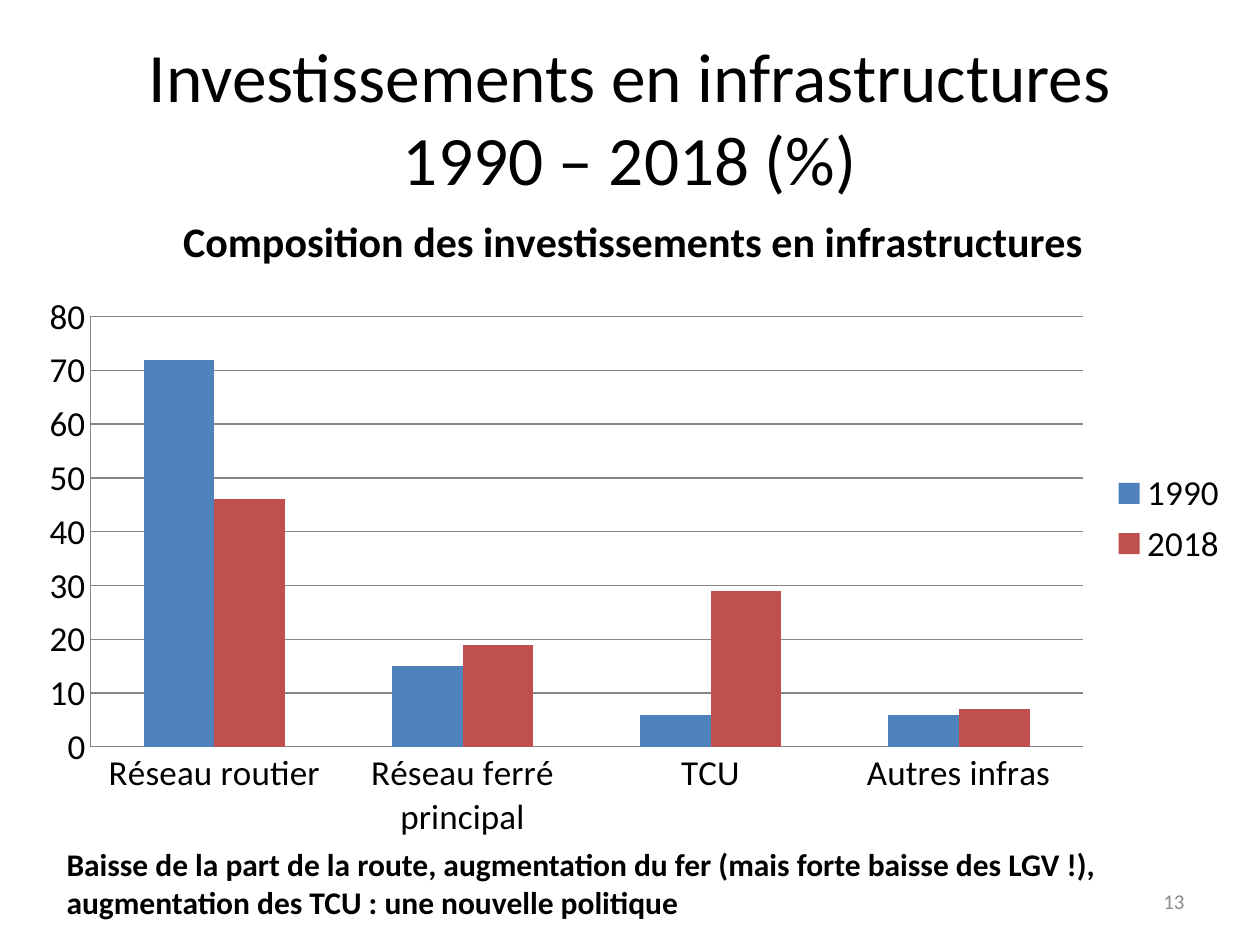
from dataclasses import dataclass

import pptx
import pptx.chart.data
import pptx.dml.color
import pptx.enum.chart
import pptx.enum.text
import pptx.util
from pptx.util import Inches


def rgb(value):
    return pptx.dml.color.RGBColor.from_string(value)


@dataclass(frozen=True)
class Theme:
    font: str = "Calibri"
    text: str = "000000"
    muted: str = "8C8C8C"
    grid: str = "868686"
    series: tuple = ("4F81BD", "C0504D")
    title_size: float = 39.6
    chart_title_size: float = 24
    chart_size: float = 20
    note_size: float = 18
    number_size: float = 12


THEME = Theme()
TITLE = "Investissements en infrastructures\v1990 – 2018 (%)"
CHART_TITLE = "Composition des investissements en infrastructures"
CATEGORIES = ["Réseau routier", "Réseau ferré principal", "TCU", "Autres infras"]
SHARES = {"1990": (72, 15, 6, 6), "2018": (46, 19, 29, 7)}
NOTE = [
    "Baisse de la part de la route, augmentation du fer (mais forte baisse des LGV !),",
    "augmentation des TCU : une nouvelle politique",
]


def style_font(font, size, color=THEME.text, bold=False):
    font.name = THEME.font
    font.size = pptx.util.Pt(size)
    font.bold = bold
    font.color.rgb = rgb(color)


def set_title(slide):
    title = slide.shapes.title
    title.left, title.top = Inches(0.5), Inches(0.3)
    title.width, title.height = Inches(9), Inches(1.25)
    frame = title.text_frame
    frame.text = TITLE
    frame.vertical_anchor = pptx.enum.text.MSO_ANCHOR.MIDDLE
    paragraph = frame.paragraphs[0]
    paragraph.alignment = pptx.enum.text.PP_ALIGN.CENTER
    style_font(paragraph.font, THEME.title_size)


def add_text(slide, box, lines, size, color=THEME.text, bold=False,
             alignment=pptx.enum.text.PP_ALIGN.LEFT,
             anchor=pptx.enum.text.MSO_ANCHOR.TOP, wrap=True):
    shape = slide.shapes.add_textbox(*map(Inches, box))
    frame = shape.text_frame
    frame.text = "\n".join(lines)
    frame.word_wrap = wrap
    frame.vertical_anchor = anchor
    for paragraph in frame.paragraphs:
        paragraph.alignment = alignment
        style_font(paragraph.font, size, color, bold)


def style_axes(chart):
    for axis in (chart.category_axis, chart.value_axis):
        axis.major_tick_mark = pptx.enum.chart.XL_TICK_MARK.NONE
        axis.minor_tick_mark = pptx.enum.chart.XL_TICK_MARK.NONE
        axis.format.line.color.rgb = rgb(THEME.grid)
        axis.format.line.width = pptx.util.Pt(0.75)
    value_axis = chart.value_axis
    value_axis.minimum_scale, value_axis.maximum_scale = 0, 80
    value_axis.major_unit = 10
    value_axis.has_major_gridlines = True
    gridline = value_axis.major_gridlines.format.line
    gridline.color.rgb = rgb(THEME.grid)
    gridline.width = pptx.util.Pt(0.75)


def add_share_chart(slide):
    data = pptx.chart.data.CategoryChartData(number_format="General")
    data.categories = CATEGORIES
    for year, values in SHARES.items():
        data.add_series(year, values)
    chart = slide.shapes.add_chart(
        pptx.enum.chart.XL_CHART_TYPE.COLUMN_CLUSTERED,
        Inches(0.2), Inches(1.47), Inches(9.65), Inches(5.29), data,
    ).chart
    style_font(chart.font, THEME.chart_size)

    chart.has_title = True
    title_frame = chart.chart_title.text_frame
    title_frame.text = CHART_TITLE
    style_font(title_frame.paragraphs[0].font, THEME.chart_title_size, bold=True)
    chart.chart_title.include_in_layout = False

    chart.has_legend = True
    chart.legend.position = pptx.enum.chart.XL_LEGEND_POSITION.RIGHT
    chart.legend.include_in_layout = False
    style_axes(chart)

    plot = chart.plots[0]
    plot.gap_width, plot.overlap = 150, 0
    plot.vary_by_categories = False
    for series, color in zip(plot.series, THEME.series):
        series.format.fill.solid()
        series.format.fill.fore_color.rgb = rgb(color)


def main():
    presentation = pptx.Presentation()
    presentation.slide_width, presentation.slide_height = Inches(10), Inches(7.5)
    title_only = presentation.slide_layouts.get_by_name("Title Only")
    slide = presentation.slides.add_slide(title_only)

    set_title(slide)
    add_share_chart(slide)
    add_text(slide, (0.43, 6.66, 8.44, 0.71), NOTE, THEME.note_size,
             bold=True, wrap=False)
    add_text(slide, (7.17, 6.95, 2.33, 0.4), ["13"], THEME.number_size, THEME.muted,
             alignment=pptx.enum.text.PP_ALIGN.RIGHT,
             anchor=pptx.enum.text.MSO_ANCHOR.MIDDLE)
    presentation.save("out.pptx")


if __name__ == "__main__":
    main()
